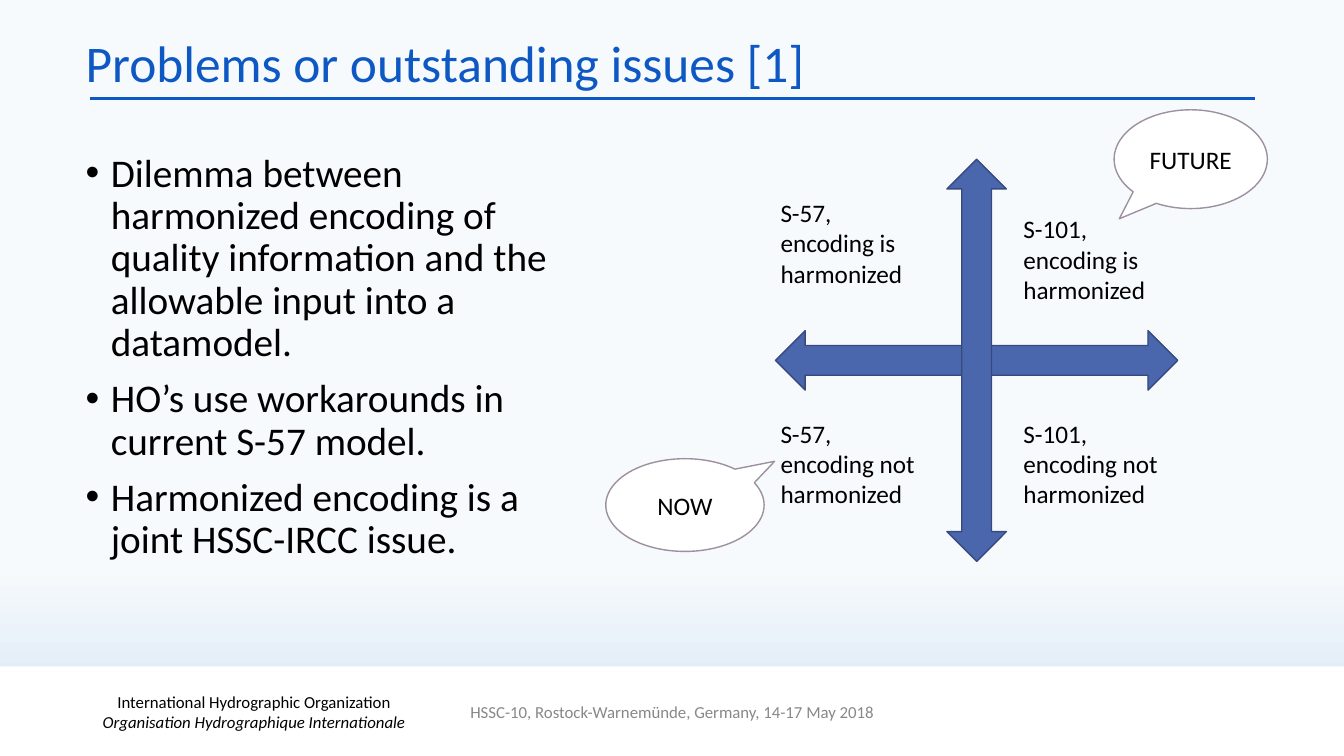
from lxml import etree
from pptx import Presentation, util as u
from pptx.dml.color import RGBColor
from pptx.enum import shapes, text
from pptx.oxml.ns import qn

BLUE, BLACK, GREY, WHITE = "0E58C4", "000000", "888888", "FFFFFF"
ARROW_FILL, ARROW_EDGE, CALLOUT_EDGE = "4A66AC", "364A7E", "9D90A0"
LEFT, CENTER = text.PP_ALIGN.LEFT, text.PP_ALIGN.CENTER
TOP, MIDDLE = text.MSO_ANCHOR.TOP, text.MSO_ANCHOR.MIDDLE


def color(value):
    return RGBColor.from_string(value)


class SlideBuilder:
    """Draws on one slide; all lengths are percentages of its width and height."""

    font = "Calibri"
    inset = u.Inches(0.05)

    def __init__(self, deck):
        self.width, self.height = deck.slide_width, deck.slide_height
        self.page = deck.slides.add_slide(deck.slide_layouts[1])

    def area(self, left, top, width, height):
        return (int(self.width * left / 100), int(self.height * top / 100),
                int(self.width * width / 100), int(self.height * height / 100))

    def background(self, stops, angle):
        fill = self.page.background.fill
        fill.gradient()
        fill.gradient_angle = angle
        for stop, (position, value) in zip(fill.gradient_stops, stops):
            stop.position = position
            stop.color.rgb = color(value)

    def frame(self, box, anchor):
        frame = box.text_frame
        frame.word_wrap = True
        frame.auto_size = text.MSO_AUTO_SIZE.NONE
        frame.vertical_anchor = anchor
        frame.margin_left = frame.margin_right = self.inset
        frame.margin_top = frame.margin_bottom = self.inset
        return frame

    def add_lines(self, para, lines, size, value=BLACK, align=LEFT):
        """Add (wording, italic) lines to one paragraph, split by line breaks."""
        para.alignment = align
        for index, (wording, italic) in enumerate(lines):
            if index:
                para.add_line_break()
            span = para.add_run()
            span.text = wording
            span.font.name = self.font
            span.font.size = u.Pt(size)
            span.font.italic = italic
            span.font.color.rgb = color(value)

    def place(self, box, area):
        box.left, box.top, box.width, box.height = self.area(*area)

    def title(self, area, wording):
        box = self.page.shapes.title
        self.place(box, area)
        para = self.frame(box, MIDDLE).paragraphs[0]
        para.line_spacing = 0.9
        self.add_lines(para, [(wording, False)], 36.7, BLUE)

    def bullets(self, area, items):
        box = self.page.placeholders[1]
        self.place(box, area)
        frame = self.frame(box, TOP)
        for index, item in enumerate(items):
            para = frame.add_paragraph() if index else frame.paragraphs[0]
            properties = para._p.get_or_add_pPr()
            properties.set("marL", str(u.Inches(0.25)))
            properties.set("indent", str(u.Inches(-0.25)))
            etree.SubElement(properties, qn("a:buFont"), typeface="Arial")
            etree.SubElement(properties, qn("a:buChar"), char="•")
            para.line_spacing = 0.9
            para.space_before = u.Pt(10 if index else 0)
            self.add_lines(para, [(item, False)], 28)

    def label(self, area, lines, size, value=BLACK, align=LEFT, anchor=TOP):
        box = self.page.shapes.add_textbox(*self.area(*area))
        self.add_lines(self.frame(box, anchor).paragraphs[0], lines, size, value, align)

    def shape(self, kind, area, fill, edge=None, adjustments=()):
        box = self.page.shapes.add_shape(kind, *self.area(*area))
        box.shadow.inherit = False
        box.fill.solid()
        box.fill.fore_color.rgb = color(fill)
        if edge:
            box.line.color.rgb = color(edge)
            box.line.width = u.Pt(1)
        else:
            box.line.fill.background()
        for index, adjustment in enumerate(adjustments):
            box.adjustments[index] = adjustment
        return box

    def callout(self, area, wording, tip):
        box = self.shape(shapes.MSO_SHAPE.OVAL_CALLOUT, area, WHITE, CALLOUT_EDGE, tip)
        para = self.frame(box, MIDDLE).paragraphs[0]
        self.add_lines(para, [(wording, False)], 18, align=CENTER)

    def rule(self, left, right, top):
        x, y, length, _ = self.area(left, top, right - left, 0)
        line = self.page.shapes.add_connector(
            shapes.MSO_CONNECTOR.STRAIGHT, x, y, x + length, y)
        line.line.color.rgb = color(BLUE)
        line.line.width = u.Pt(2.25)
        etree.SubElement(line._element.spPr, qn("a:effectLst"))


def main():
    deck = Presentation()
    deck.slide_width, deck.slide_height = u.Inches(13.33), u.Inches(7.5)
    slide = SlideBuilder(deck)
    slide.background([(0.75, "F7FAFD"), (1, "D0E2F1")], 270)

    slide.title((6, 4, 73.65, 9.33), "Problems or outstanding issues [1]")
    slide.rule(6.68, 93.4, 13.07)
    slide.bullets((6, 19.6, 37.05, 63.87), [
        "Dilemma between harmonized encoding of quality information "
        "and the allowable input into a datamodel.",
        "HO’s use workarounds in current S-57 model.",
        "Harmonized encoding is a joint HSSC-IRCC issue.",
    ])

    slide.shape(shapes.MSO_SHAPE.RECTANGLE, (0, 88.13, 100, 11.87), WHITE)
    slide.label((2.03, 90.93, 33.75, 6.53),
                [("International Hydrographic Organization", False),
                 ("Organisation Hydrographique Internationale", True)],
                12, align=CENTER, anchor=MIDDLE)
    slide.label((33.15, 92.27, 33.75, 3.87),
                [("HSSC-10, Rostock-Warnemünde, Germany, 14-17 May 2018", False)],
                12, GREY, CENTER, MIDDLE)

    for rotation in (0, 90):
        axis = slide.shape(shapes.MSO_SHAPE.LEFT_RIGHT_ARROW,
                           (57.7, 43.73, 29.93, 7.87), ARROW_FILL, ARROW_EDGE, (0.5, 0.5))
        axis.rotation = rotation

    for standard, left, harmonized_top in (("S-57", 57.7, 25.47), ("S-101", 75.77, 27.6)):
        for state, top in (("not", 54.67), ("is", harmonized_top)):
            slide.label((left, top, 11.83, 13.07),
                        [(f"{standard}, encoding {state} harmonized", False)], 18)

    slide.callout((45.08, 60.67, 11.78, 12.27), "NOW", (0.566, -0.471))
    slide.callout((82.9, 14.53, 11.4, 13.07), "FUTURE", (-0.466, 0.603))
    deck.save("out.pptx")


if __name__ == "__main__":
    main()
